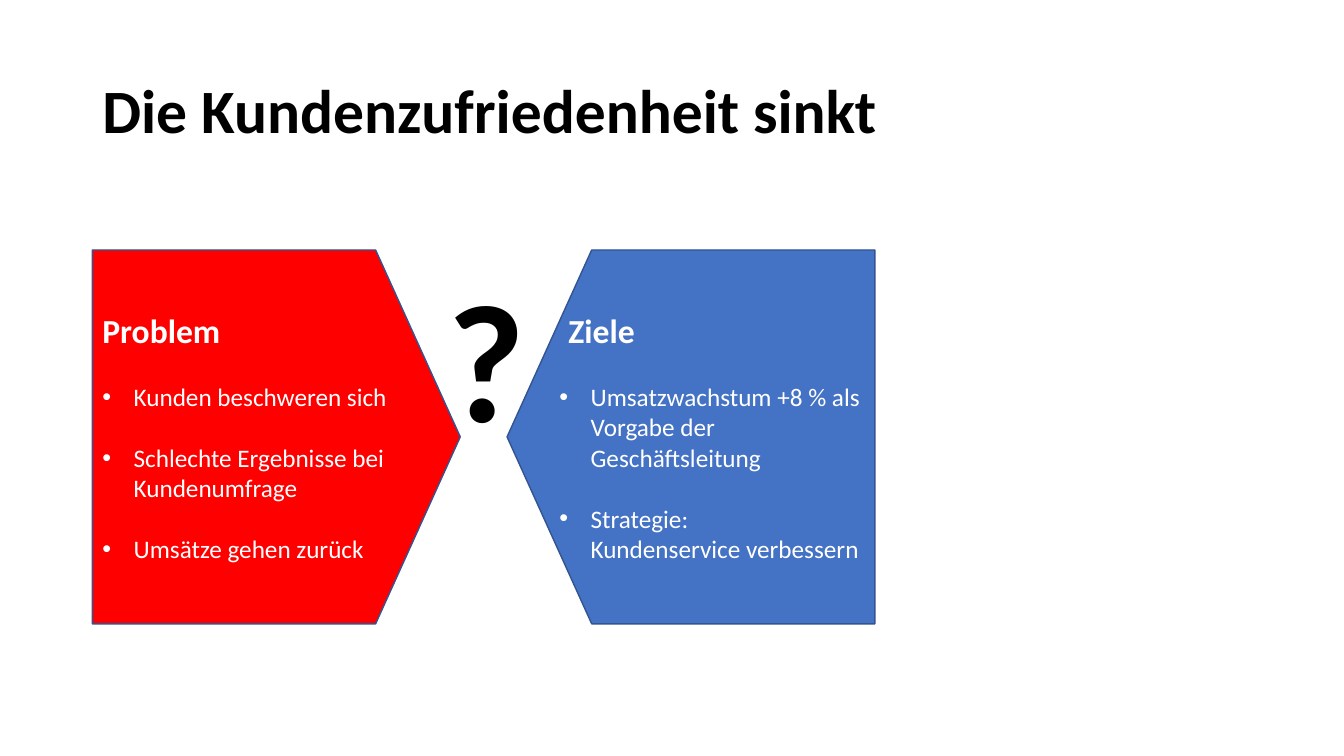
from dataclasses import dataclass

from lxml.etree import SubElement
from pptx import Presentation
from pptx.dml.color import RGBColor
from pptx.enum.shapes import MSO_SHAPE
from pptx.enum.text import MSO_ANCHOR as Anchor, PP_ALIGN as Align
from pptx.oxml.ns import qn
from pptx.util import Cm, Pt

# Content
TITLE = "Die Kundenzufriedenheit sinkt"
QUESTION = "?"
PANELS = [
    {"heading": "Problem", "fill": "FF0000", "faces_left": False, "indent": 0,
     "points": ["Kunden beschweren sich",
                "Schlechte Ergebnisse bei Kundenumfrage",
                "Umsätze gehen zurück"]},
    {"heading": "Ziele", "fill": "4472C4", "faces_left": True, "indent": 0.23,
     "points": ["Umsatzwachstum +8 % als Vorgabe der Geschäftsleitung",
                "Strategie:\vKundenservice verbessern"]},
]


@dataclass(frozen=True)
class Theme:
    font: str = "Calibri"
    dark: str = "000000"
    light: str = "FFFFFF"
    outline: str = "325491"
    title_size: int = 44
    heading_size: int = 24
    point_size: int = 18
    point_gap: int = 22
    question_size: int = 120


THEME = Theme()

# Layout in centimetres
LEFT, TOP = 2.33, 6.3
PANEL_WIDTH, PANEL_HEIGHT = 9.27, 9.42
PANEL_STEP = 10.45
TIP_DEPTH = 0.23
HANGING = 0.79


def style_para(para, size, color, bold=False):
    para.alignment = Align.LEFT
    for span in para.runs:
        span.font.name = THEME.font
        span.font.size = Pt(size)
        span.font.bold = bold
        span.font.color.rgb = RGBColor.from_string(color)


def indent_para(para, margin, first_line=0, bullet=None):
    properties = para._p.get_or_add_pPr()
    properties.set("marL", str(Cm(margin)))
    properties.set("indent", str(Cm(first_line)))
    if bullet:
        SubElement(properties, qn("a:buFont")).set("typeface", "Arial")
        SubElement(properties, qn("a:buChar")).set("char", bullet)


def add_label(page, text, place, size, anchor):
    box = page.shapes.add_textbox(*map(Cm, place))
    frame = box.text_frame
    frame.word_wrap = True
    frame.vertical_anchor = anchor
    frame.text = text
    para = frame.paragraphs[0]
    style_para(para, size, THEME.dark, bold=True)
    return para


def add_panel(page, panel, left):
    shape = page.shapes.add_shape(MSO_SHAPE.PENTAGON, Cm(left), Cm(TOP),
                                  Cm(PANEL_WIDTH), Cm(PANEL_HEIGHT))
    shape.adjustments[0] = TIP_DEPTH
    shape.shadow.inherit = False
    shape.fill.solid()
    shape.fill.fore_color.rgb = RGBColor.from_string(panel["fill"])
    shape.line.color.rgb = RGBColor.from_string(THEME.outline)
    shape.line.width = Pt(1)
    if panel["faces_left"]:
        shape._element.spPr.find(qn("a:xfrm")).set("flipH", "1")

    # Heading
    frame = shape.text_frame
    frame.word_wrap = True
    frame.vertical_anchor = Anchor.MIDDLE
    frame.text = panel["heading"]
    heading = frame.paragraphs[0]
    style_para(heading, THEME.heading_size, THEME.light, bold=True)
    indent_para(heading, panel["indent"])

    # Bullet points
    for point in panel["points"]:
        para = frame.add_paragraph()
        para.text = point
        para.space_before = Pt(THEME.point_gap)
        style_para(para, THEME.point_size, THEME.light)
        indent_para(para, HANGING, -HANGING, "•")


def main():
    deck = Presentation()
    deck.slide_width, deck.slide_height = Cm(33.87), Cm(19.05)
    page = deck.slides.add_slide(deck.slide_layouts[6])

    # Title
    title = add_label(page, TITLE, (LEFT, 1.01, 29.21, 3.68),
                      THEME.title_size, Anchor.MIDDLE)
    title.line_spacing = 0.9

    # Facing panels
    for index, panel in enumerate(PANELS):
        add_panel(page, panel, LEFT + index * PANEL_STEP)

    # Question mark between the panels
    add_label(page, QUESTION, (11.02, TOP, 5.16, 5.38),
              THEME.question_size, Anchor.TOP)

    deck.save("out.pptx")


if __name__ == "__main__":
    main()
